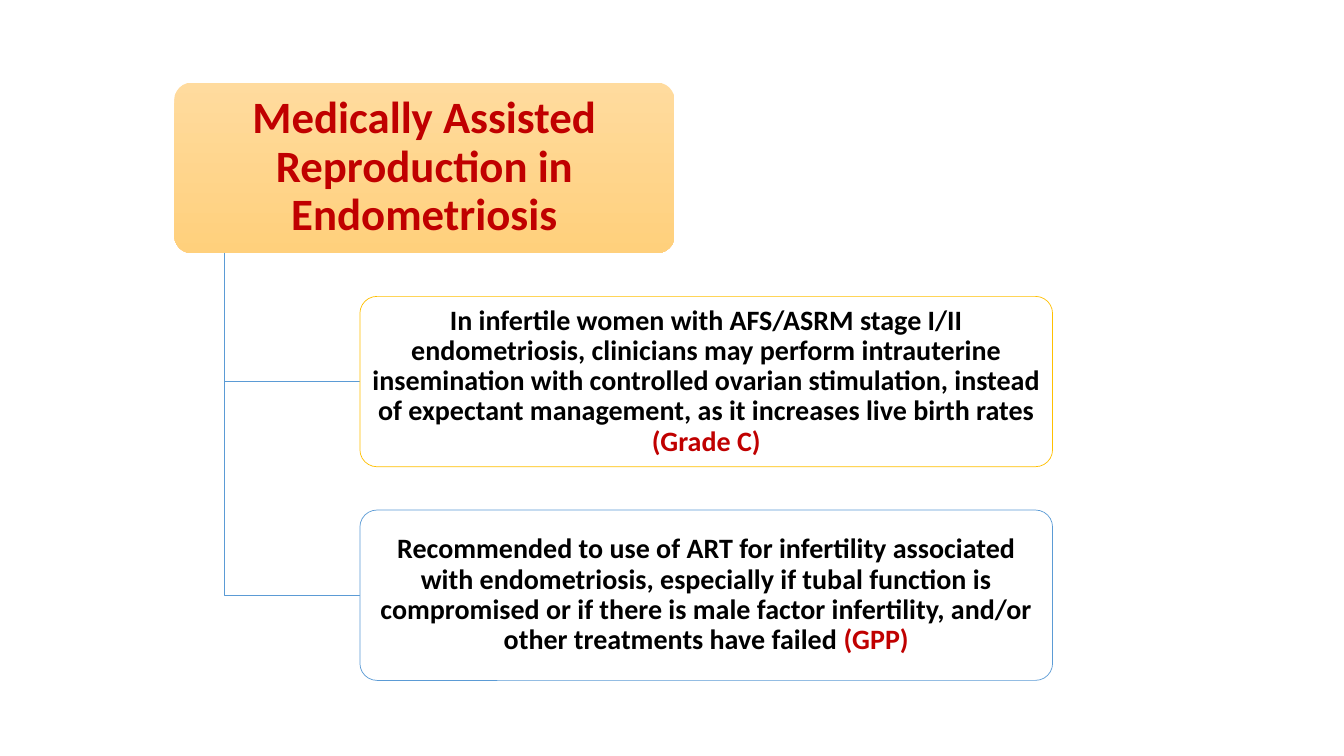
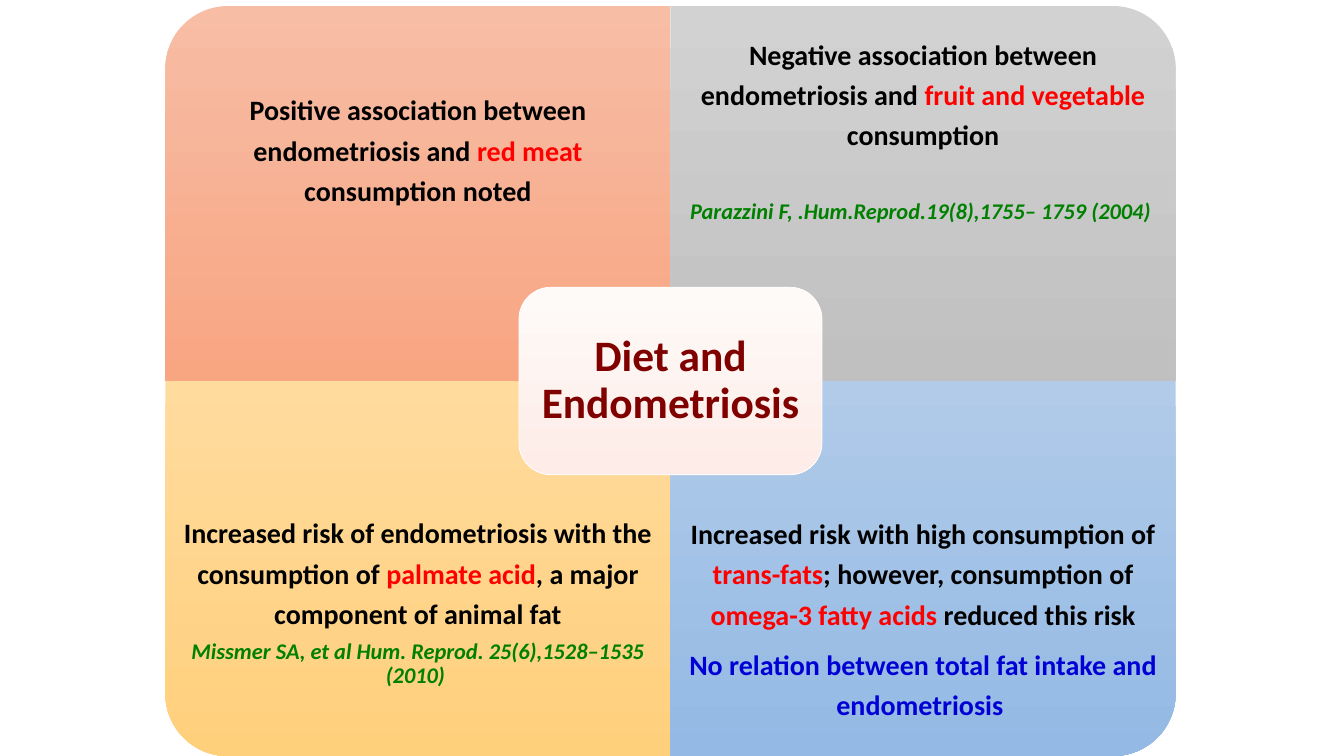
from pptx import Presentation
from pptx.dml.color import RGBColor
from pptx.enum.shapes import MSO_SHAPE as Preset
from pptx.enum.text import MSO_ANCHOR as Anchor, MSO_AUTO_SIZE as AutoSize, PP_ALIGN as Align
from pptx.oxml.ns import qn
from pptx.util import Inches, Pt

# Shared look
SLIDE_WIDTH, SLIDE_HEIGHT = 13.33, 7.5
FONT = "Calibri"
TITLE_ONLY = 5

BLACK = RGBColor(0x00, 0x00, 0x00)
WHITE = RGBColor(0xFF, 0xFF, 0xFF)
DARK_RED = RGBColor(0xC0, 0x00, 0x00)
MAROON = RGBColor(0x80, 0x00, 0x00)
RED = RGBColor(0xFF, 0x00, 0x00)
GREEN = RGBColor(0x00, 0x80, 0x00)
BLUE = RGBColor(0x00, 0x00, 0xD4)
GOLD_LINE = RGBColor(0xFF, 0xC0, 0x00)
BLUE_LINE = RGBColor(0x5B, 0x9B, 0xD5)

# Gradients, top colour to bottom colour
GOLD = RGBColor(0xFF, 0xDB, 0x9E), RGBColor(0xFF, 0xD0, 0x7C)
CORAL = RGBColor(0xF7, 0xBD, 0xA5), RGBColor(0xF8, 0xA5, 0x82)
GREY = RGBColor(0xD2, 0xD2, 0xD2), RGBColor(0xC0, 0xC0, 0xC0)
SKY = RGBColor(0xB1, 0xCB, 0xE9), RGBColor(0x93, 0xB9, 0xE4)
BLUSH = RGBColor(0xFE, 0xFA, 0xF8), RGBColor(0xFD, 0xEC, 0xE7)

# Paragraph formats
BODY = {"line_spacing": 0.9}
LOOSE = {"line_spacing": 1.2, "space_after": Pt(7)}
LOOSE_WIDE = {"line_spacing": 1.2, "space_after": Pt(35)}
PLAIN = {"size": Pt(20), "bold": True}
CITATION = {"size": Pt(16), "bold": True, "italic": True}


def apply_format(target, values):
    for name, value in values.items():
        setattr(target, name, value)


def place(shape, left, top, width, height):
    apply_format(shape, {"left": Inches(left), "top": Inches(top),
                         "width": Inches(width), "height": Inches(height)})


def fill_gradient(shape, colors):
    """Vertical gradient that stays upright when the shape is rotated."""
    shape.fill.gradient()
    shape.fill.gradient_angle = 270
    for stop, color in zip(shape.fill.gradient_stops, colors):
        stop.color.rgb = color
    shape.element.spPr.find(qn("a:gradFill")).set("rotWithShape", "0")


def set_line(shape, color=None, width=0.5):
    if color is None:
        shape.line.fill.background()
    else:
        shape.line.color.rgb = color
        shape.line.width = Pt(width)


def write(shape, paragraphs, insets, bottom_extra=0):
    """Each paragraph is (paragraph format, font format, [(text, colour), ...])."""
    frame = shape.text_frame
    across, down = insets
    apply_format(frame, {
        "word_wrap": True, "auto_size": AutoSize.NONE, "vertical_anchor": Anchor.MIDDLE,
        "margin_left": Inches(across), "margin_right": Inches(across),
        "margin_top": Inches(down), "margin_bottom": Inches(down + bottom_extra)})
    for index, (paragraph_format, font_format, runs) in enumerate(paragraphs):
        paragraph = frame.add_paragraph() if index else frame.paragraphs[0]
        apply_format(paragraph, {"alignment": Align.CENTER, "space_before": Pt(0),
                                 **paragraph_format})
        for text, color in runs:
            run = paragraph.add_run()
            run.text = text
            apply_format(run.font, {"name": FONT, **font_format})
            run.font.color.rgb = color


def add_preset(slide, preset, box):
    shape = slide.shapes.add_shape(preset, *map(Inches, box))
    shape.shadow.inherit = False
    return shape


def add_rounded_title(slide, text, box, size, color, gradient, margin, insets, corner):
    """Rounded panel with the title placeholder in front of it; returns the panel."""
    panel = add_preset(slide, Preset.ROUNDED_RECTANGLE, box)
    panel.adjustments[0] = corner
    fill_gradient(panel, gradient)
    set_line(panel)
    left, top, width, height = box
    title = slide.shapes.title
    title.element.getparent().append(title.element)
    place(title, left + margin, top + margin, width - 2 * margin, height - 2 * margin)
    write(title, [(BODY, {"size": Pt(size), "bold": True}, [(text, color)])], insets)
    return panel


def add_elbow(slide, x, top, right, bottom):
    """Open outline that runs down from (x, top), then right."""
    builder = slide.shapes.build_freeform(Inches(x), Inches(top))
    builder.add_line_segments([(Inches(x), Inches(bottom)), (Inches(right), Inches(bottom))],
                              close=False)
    elbow = builder.convert_to_shape()
    elbow.shadow.inherit = False
    elbow.fill.background()
    set_line(elbow, BLUE_LINE, 1)


def add_recommendation(slide, box, text, grade, line_color):
    shape = add_preset(slide, Preset.ROUNDED_RECTANGLE, box)
    shape.adjustments[0] = 0.1
    shape.fill.solid()
    shape.fill.fore_color.rgb = WHITE
    set_line(shape, line_color)
    write(shape, [(BODY, PLAIN, [(text, BLACK), (grade, DARK_RED)])], (0.04, 0.03))


def add_quadrant(slide, box, rotation, gradient):
    left, top, width, height = box
    if rotation % 180:
        # A quarter turn swaps the sides around the same centre
        box = (left + (width - height) / 2, top + (height - width) / 2, height, width)
    shape = add_preset(slide, Preset.ROUND_1_RECTANGLE, box)
    shape.rotation = rotation
    fill_gradient(shape, gradient)
    set_line(shape)


def build_reproduction(presentation):
    slide = presentation.slides.add_slide(presentation.slide_layouts[TITLE_ONLY])
    left, top, head_width, height, row_step = 1.73, 0.82, 4.96, 1.69, 2.12
    trunk_x, child_left, child_width = 2.23, 3.57, 6.87
    add_rounded_title(slide, "Medically Assisted Reproduction in Endometriosis",
                      (left, top, head_width, height), 32, DARK_RED, GOLD,
                      0.05, (0.07, 0.04), 0.1)

    recommendations = [
        ("In infertile women with AFS/ASRM stage I/II endometriosis, clinicians may perform "
         "intrauterine insemination with controlled ovarian stimulation, instead of expectant "
         "management, as it increases live birth rates ", "(Grade C)", GOLD_LINE),
        ("Recommended to use of ART for infertility associated with endometriosis, especially "
         "if tubal function is compromised or if there is male factor infertility, and/or "
         "other treatments have failed ", "(GPP)", BLUE_LINE),
    ]
    # Each box hangs from the head by an elbow
    for row, (text, grade, color) in enumerate(recommendations, start=1):
        child_top = top + row * row_step
        add_elbow(slide, trunk_x, top + height, child_left, child_top + height / 2)
        add_recommendation(slide, (child_left, child_top, child_width, height),
                           text, grade, color)


def build_diet(presentation):
    slide = presentation.slides.add_slide(presentation.slide_layouts[TITLE_ONLY])
    left, top, width = 1.64, 0.06, 5.01
    height = (SLIDE_HEIGHT - top) / 2
    text_height = height * 0.75

    # Column, row, rotation, gradient, space kept below the text, paragraphs
    quadrants = [
        (0, 0, 270, CORAL, 0, [
            (LOOSE, PLAIN, [("Positive association between endometriosis and ", BLACK),
                            ("red meat ", RED), ("consumption noted", BLACK)])]),
        (1, 0, 0, GREY, 0.38, [
            (LOOSE_WIDE, PLAIN, [("Negative association between endometriosis and ", BLACK),
                                 ("fruit and vegetable ", RED), ("consumption", BLACK)]),
            (BODY, CITATION, [("Parazzini F, .Hum.Reprod.19(8),1755– 1759 (2004) ", GREEN)])]),
        (0, 1, 180, GOLD, 0.33, [
            (LOOSE, PLAIN, [("Increased risk of endometriosis with the consumption of ", BLACK),
                            ("palmate acid", RED),
                            (", a major component of animal fat", BLACK)]),
            (BODY, CITATION,
             [("Missmer SA, et al Hum. Reprod. 25(6),1528–1535 (2010) ", GREEN)])]),
        (1, 1, 90, SKY, 0, [
            (LOOSE, PLAIN, [("Increased risk with high consumption of ", BLACK),
                            ("trans-fats", RED), ("; however, consumption of ", BLACK),
                            ("omega-3 fatty acids ", RED), ("reduced this risk", BLACK)]),
            (LOOSE, PLAIN,
             [("No relation between total fat intake and endometriosis ", BLUE)])]),
    ]
    for column, row, rotation, gradient, space_below, paragraphs in quadrants:
        x, y = left + column * width, top + row * height
        add_quadrant(slide, (x, y, width, height), rotation, gradient)
        text_top = y + row * (height - text_height)
        text_box = slide.shapes.add_textbox(*map(Inches, (x, text_top, width, text_height)))
        write(text_box, paragraphs, (0.16, 0.16), space_below)

    # Centre box
    core_width, core_height = width * 0.6, height / 2
    core = (left + width - core_width / 2, top + height - core_height / 2,
            core_width, core_height)
    panel = add_rounded_title(slide, "Diet and Endometriosis", core, 31, MAROON, BLUSH,
                              0.09, (0.13, 0.13), 0.17)
    set_line(panel, WHITE)


def main():
    presentation = Presentation()
    presentation.slide_width = Inches(SLIDE_WIDTH)
    presentation.slide_height = Inches(SLIDE_HEIGHT)
    build_reproduction(presentation)
    build_diet(presentation)
    presentation.save("out.pptx")


if __name__ == "__main__":
    main()
